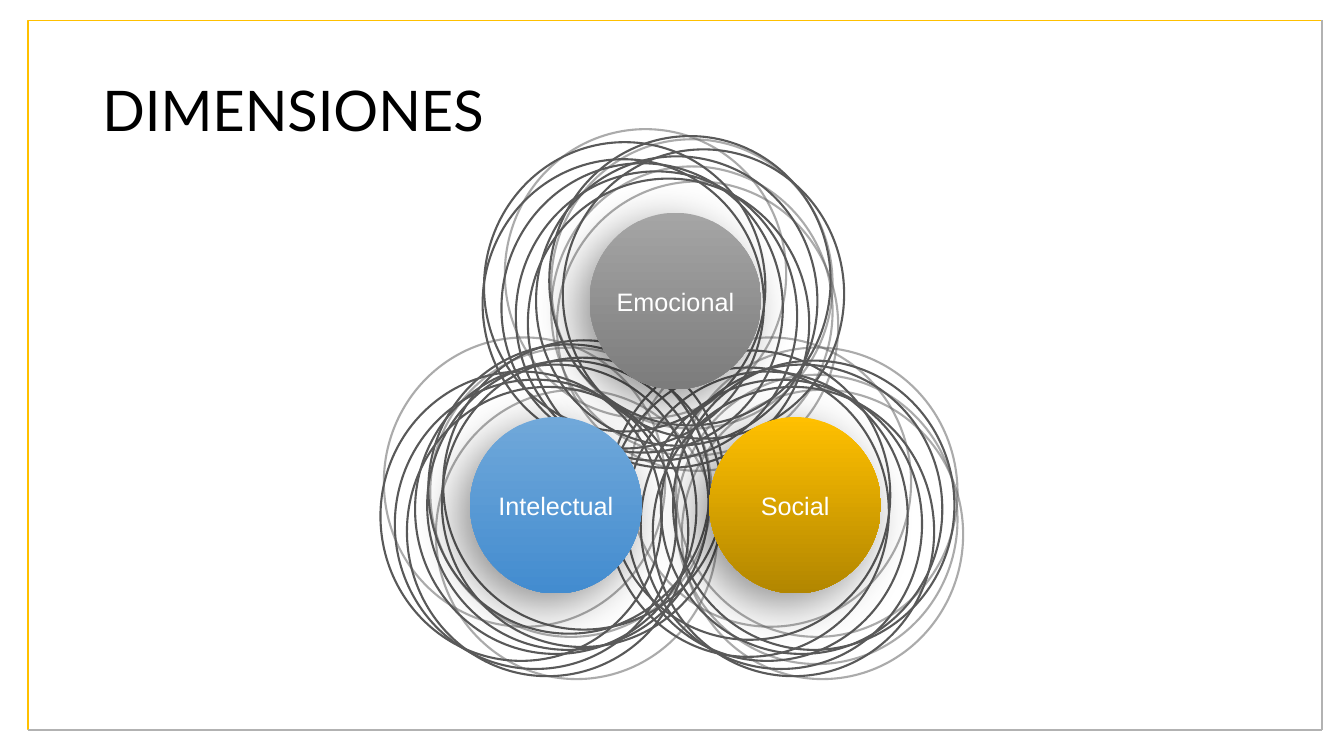
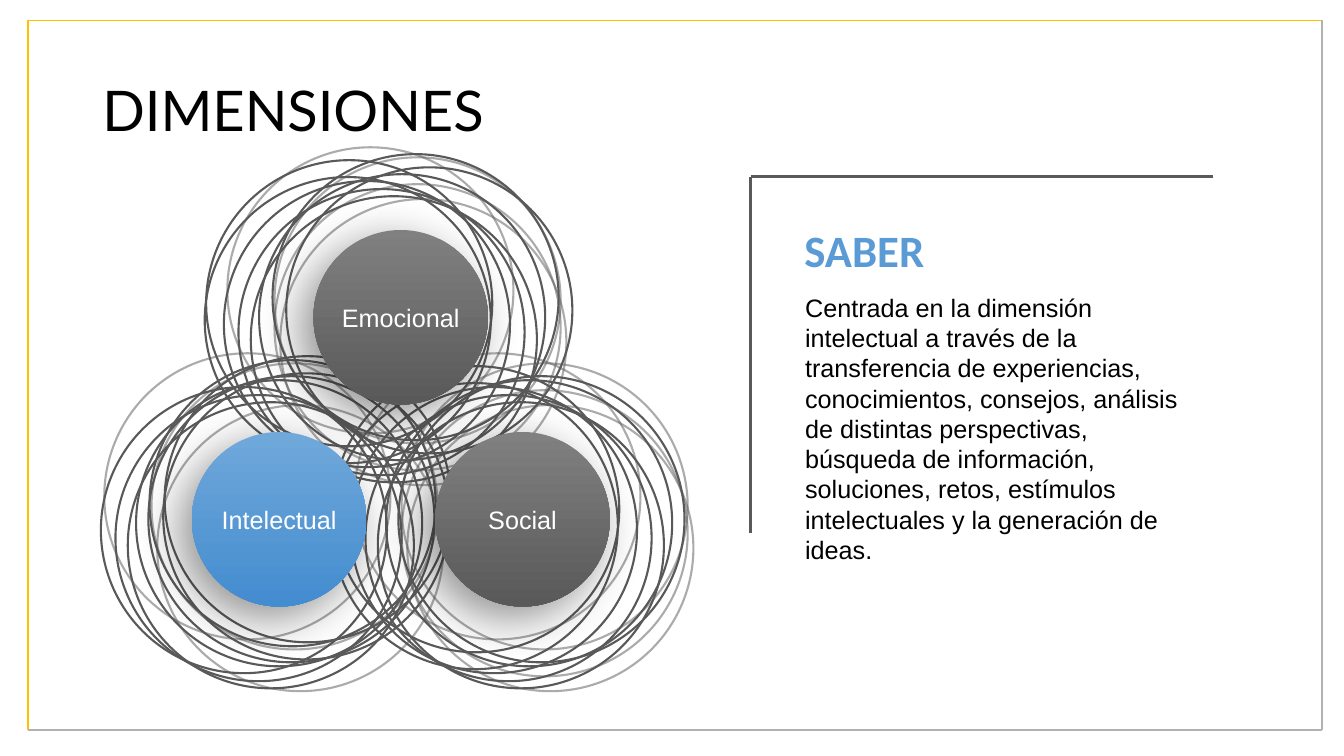
from lxml.etree import SubElement
from pptx import Presentation
from pptx.dml.color import RGBColor
from pptx.enum.shapes import MSO_CONNECTOR, MSO_SHAPE
from pptx.enum.text import MSO_ANCHOR as ANCHOR, PP_ALIGN as ALIGN
from pptx.oxml.ns import qn
from pptx.util import Cm, Pt

BLACK = RGBColor(0x00, 0x00, 0x00)
WHITE = RGBColor(0xFF, 0xFF, 0xFF)
GOLD = RGBColor(0xFF, 0xC0, 0x00)
SILVER = RGBColor(0xB2, 0xB2, 0xB2)
CHARCOAL = RGBColor(0x59, 0x59, 0x59)
BLUE = RGBColor(0x5B, 0x9B, 0xD5)

# Disc gradients, top to bottom
GRAY_FADE = (RGBColor(0xA5, 0xA5, 0xA5), RGBColor(0x7C, 0x7C, 0x7C))
DARK_FADE = (RGBColor(0x80, 0x80, 0x80), CHARCOAL)
BLUE_FADE = (RGBColor(0x70, 0xA8, 0xDA), RGBColor(0x43, 0x8C, 0xCF))
GOLD_FADE = (GOLD, RGBColor(0xB2, 0x86, 0x00))

# Ring offsets (x, y, faint) in percent of the ring size
COMMON_RINGS = [
    (0, 0, False), (-11.1, -9.4, True), (5.4, -5.9, True), (-2.9, 7.7, False),
    (-7.2, 5.2, False), (-12.3, 2.4, False), (7.4, 8.7, True),
]
WEST_RINGS = [(-19, 1, False), (-18.5, -4.9, False)]
EAST_RINGS = [(4.7, -7, False), (9.5, -2.4, False)]
LOW_RING = (5.4, 3.5, True)
INNER_RING = (4.3, -1.4, False)

# Dimension: place of its cluster and of its disc (percent of ring size), own rings
CLUSTERS = [
    ("Emocional", (0, 0), (-0.5, 0), [LOW_RING, *WEST_RINGS, *EAST_RINGS]),
    ("Social", (44.4, 72), (-2.3, -1.4), [LOW_RING, INNER_RING, *WEST_RINGS]),
    ("Intelectual", (-43, 72), (0, -1.4), [INNER_RING, *EAST_RINGS, (10, -8.4, False)]),
]
DISC_RATIO = 0.61

# Per slide: left, top, width and height of the first ring in cm, and disc colours
DIAGRAMS = [
    ((13.51, 3.94, 7.09, 7.29),
     {"Emocional": GRAY_FADE, "Social": GOLD_FADE, "Intelectual": BLUE_FADE}),
    ((6.53, 4.39, 7.21, 7.21),
     {"Emocional": DARK_FADE, "Social": DARK_FADE, "Intelectual": BLUE_FADE}),
]


def write(shape, text, size=18, font="Arial", color=BLACK, bold=False,
          align=ALIGN.LEFT, anchor=ANCHOR.TOP, spacing=1.0, inset=None):
    frame = shape.text_frame
    frame.word_wrap = True
    frame.vertical_anchor = anchor
    if inset is not None:
        frame.margin_left = frame.margin_right = inset
        frame.margin_top = frame.margin_bottom = inset
    paragraph = frame.paragraphs[0]
    paragraph.alignment = align
    paragraph.line_spacing = spacing
    run = paragraph.add_run()
    run.text = text
    run.font.size, run.font.name, run.font.bold = Pt(size), font, bold
    run.font.color.rgb = color


def draw_line(slide, x1, y1, x2, y2, color, width):
    line = slide.shapes.add_connector(
        MSO_CONNECTOR.STRAIGHT, Cm(x1), Cm(y1), Cm(x2), Cm(y2))
    line.line.color.rgb = color
    line.line.width = Pt(width)
    SubElement(line._element.spPr, qn("a:effectLst"))


prs = Presentation()
prs.slide_width, prs.slide_height = Cm(33.87), Cm(19.05)

for (left, top, width, height), fades in DIAGRAMS:
    slide = prs.slides.add_slide(prs.slide_layouts[6])

    # Frame: gold, with silver right and bottom edges
    border = slide.shapes.add_shape(
        MSO_SHAPE.RECTANGLE, Cm(0.71), Cm(0.51), Cm(32.61), Cm(17.88))
    border.shadow.inherit = False
    border.fill.solid()
    border.fill.fore_color.rgb = WHITE
    border.line.color.rgb = GOLD
    border.line.width = Pt(1)
    draw_line(slide, 33.32, 0.51, 33.32, 18.39, SILVER, 1)
    draw_line(slide, 0.71, 18.39, 33.32, 18.39, SILVER, 1)

    # Title
    title = slide.shapes.add_textbox(Cm(2.33), Cm(1.01), Cm(29.21), Cm(3.68))
    write(title, "DIMENSIONES", size=40, font="Lato", anchor=ANCHOR.MIDDLE, spacing=0.9)

    # Rings of all three clusters
    diagram = slide.shapes.add_group_shape()
    for _, (cluster_x, cluster_y), _, own_rings in CLUSTERS:
        for dx, dy, faint in COMMON_RINGS + own_rings:
            ring = diagram.shapes.add_shape(
                MSO_SHAPE.OVAL,
                Cm(left + width * (cluster_x + dx) / 100),
                Cm(top + height * (cluster_y + dy) / 100),
                Cm(width), Cm(height))
            ring.shadow.inherit = False
            ring.fill.background()
            ring.line.color.rgb = CHARCOAL
            ring.line.width = Pt(1.5)
            if faint:
                ink = ring._element.spPr.find(".//" + qn("a:srgbClr"))
                SubElement(ink, qn("a:alpha"), val="50000")

    # Discs on top of the rings
    margin = (1 - DISC_RATIO) / 2
    for dimension, (cluster_x, cluster_y), (dx, dy), _ in CLUSTERS:
        disc = diagram.shapes.add_shape(
            MSO_SHAPE.OVAL,
            Cm(left + width * ((cluster_x + dx) / 100 + margin)),
            Cm(top + height * ((cluster_y + dy) / 100 + margin)),
            Cm(width * DISC_RATIO), Cm(height * DISC_RATIO))
        disc.fill.gradient()
        disc.fill.gradient_angle = 270
        for stop, color in zip(disc.fill.gradient_stops, fades[dimension]):
            stop.color.rgb = color
        disc.line.fill.background()
        disc.shadow.inherit = False
        shadow = SubElement(
            disc._element.spPr.find(qn("a:effectLst")), qn("a:outerShdw"),
            blurRad=str(Pt(34)), dist=str(Pt(12)), dir="8100000",
            algn="ctr", rotWithShape="0")
        shade = SubElement(shadow, qn("a:srgbClr"), val=str(BLACK))
        SubElement(shade, qn("a:alpha"), val="44000")
        write(disc, dimension, color=WHITE, align=ALIGN.CENTER,
              anchor=ANCHOR.MIDDLE, inset=0)

# Explanation of the intellectual dimension, on the last slide
explanation = slide.shapes.add_textbox(Cm(20.04), Cm(7.24), Cm(10.54), Cm(7.19))
write(explanation,
      "Centrada en la dimensión intelectual a través de la transferencia de "
      "experiencias, conocimientos, consejos, análisis de distintas perspectivas, "
      "búsqueda de información, soluciones, retos, estímulos intelectuales y la "
      "generación de ideas.")
heading = slide.shapes.add_textbox(Cm(20.02), Cm(5.46), Cm(10.57), Cm(1.63))
write(heading, "SABER", size=32, font="Calibri", color=BLUE, bold=True,
      anchor=ANCHOR.BOTTOM)

# Corner bracket
draw_line(slide, 18.92, 4.45, 18.92, 13.44, CHARCOAL, 2.25)
draw_line(slide, 18.92, 4.45, 30.58, 4.45, CHARCOAL, 2.25)

prs.save("out.pptx")
